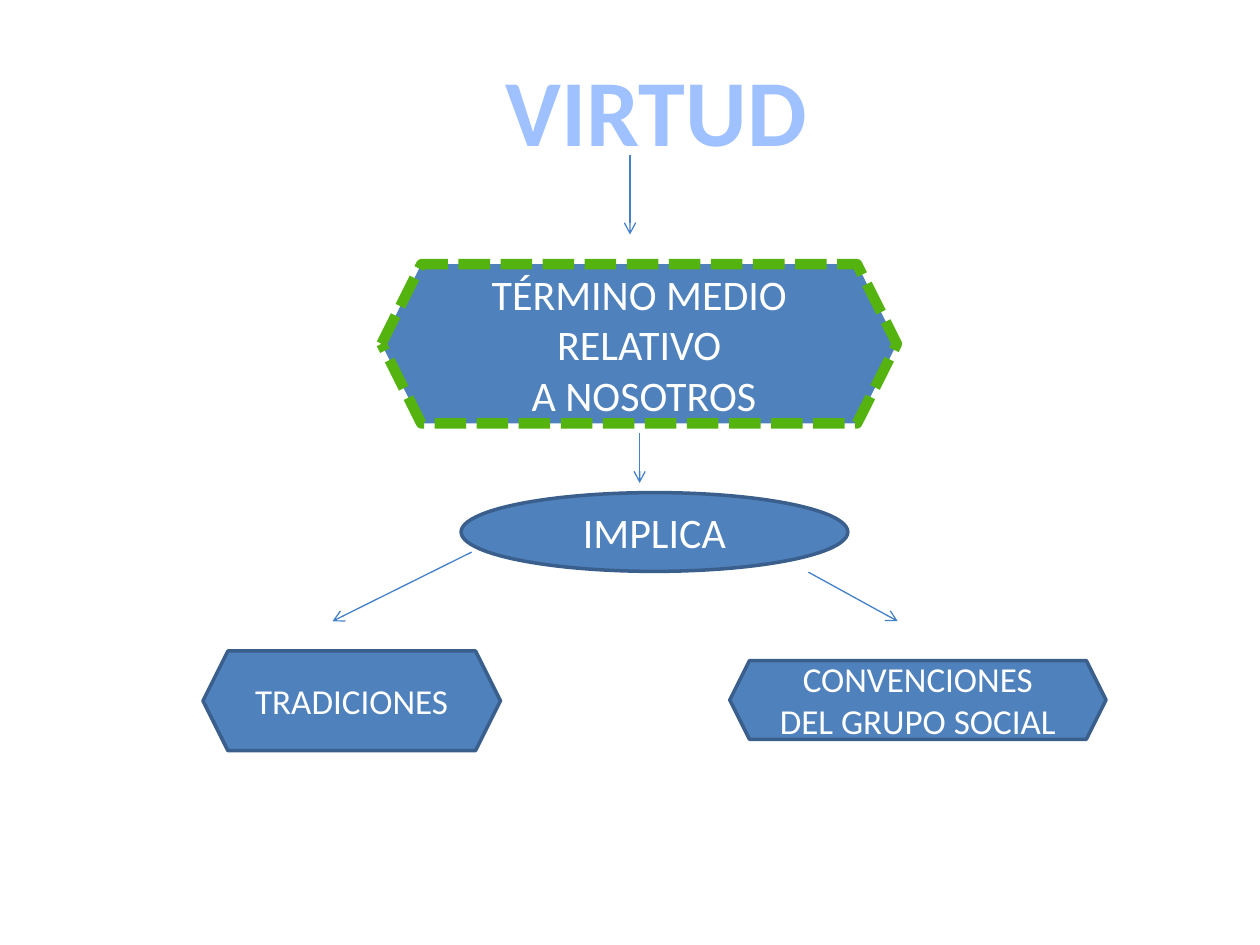
from lxml.etree import SubElement
from pptx import Presentation
from pptx.dml.color import RGBColor
from pptx.enum.dml import MSO_LINE
from pptx.enum.shapes import MSO_CONNECTOR, MSO_SHAPE
from pptx.enum.text import MSO_ANCHOR, MSO_AUTO_SIZE, PP_ALIGN
from pptx.oxml.ns import qn
from pptx.util import Pt

COLORS = {
    "title": "A0C1FF",
    "node": "4F81BD",
    "border": "3A5F8C",
    "highlight": "55B30F",
    "arrow": "4480C8",
    "text": "FFFFFF",
}
FONT = "Calibri"
NODE_TEXT = {
    "word_wrap": True,
    "vertical_anchor": MSO_ANCHOR.MIDDLE,
    "margin_left": Pt(4),
    "margin_right": Pt(4),
}


def color(key):
    return RGBColor.from_string(COLORS[key])


def set_all(target, values):
    for name, value in values.items():
        setattr(target, name, value)


def place(shape, box):
    set_all(shape, dict(zip(("left", "top", "width", "height"), map(Pt, box))))


def write(frame, lines, size, color_key, bold=False):
    """Fill a text frame with one centred paragraph per line."""
    for index, line in enumerate(lines):
        paragraph = frame.paragraphs[0] if index == 0 else frame.add_paragraph()
        paragraph.alignment = PP_ALIGN.CENTER
        run = paragraph.add_run()
        run.text = line
        set_all(run.font, {"name": FONT, "size": Pt(size), "bold": bold})
        run.font.color.rgb = color(color_key)


def add_title(slide, box, wording):
    title = slide.shapes.title
    place(title, box)
    set_all(title.text_frame, {
        "word_wrap": False,
        "auto_size": MSO_AUTO_SIZE.SHAPE_TO_FIT_TEXT,
        "vertical_anchor": MSO_ANCHOR.TOP,
    })
    write(title.text_frame, [wording], 54, "title", bold=True)


def add_node(slide, outline, box, lines, size, border="border", weight=2, dash=None):
    node = slide.shapes.add_shape(outline, *map(Pt, box))
    node.shadow.inherit = False
    node.fill.solid()
    node.fill.fore_color.rgb = color("node")
    node.line.color.rgb = color(border)
    set_all(node.line, {"width": Pt(weight), "dash_style": dash})
    set_all(node.text_frame, NODE_TEXT)
    write(node.text_frame, lines, size, "text")


def add_arrow(slide, start, end):
    arrow = slide.shapes.add_connector(MSO_CONNECTOR.STRAIGHT, *map(Pt, start + end))
    arrow.line.color.rgb = color("arrow")
    arrow.line.width = Pt(0.75)
    SubElement(arrow.line._get_or_add_ln(), qn("a:tailEnd"), type="arrow")
    SubElement(arrow._element.spPr, qn("a:effectLst"))


def add_virtue_map(slide, left, top):
    """Draw the concept map with its upper left corner at the given point."""
    def at(x, y, *size):
        return (left + x, top + y, *size)

    hexagon = MSO_SHAPE.HEXAGON
    add_title(slide, at(164.5, 0, 189, 73), "VIRTUD")
    add_node(slide, hexagon, at(102, 125, 294.5, 91),
             ["TÉRMINO MEDIO RELATIVO", " A NOSOTROS"], 24,
             border="highlight", weight=6, dash=MSO_LINE.SQUARE_DOT)
    add_node(slide, MSO_SHAPE.OVAL, at(147.5, 255.5, 221, 45), ["IMPLICA"], 24)
    add_node(slide, hexagon, at(0, 346, 170, 57), ["TRADICIONES"], 20)
    add_node(slide, hexagon, at(301, 351.5, 215, 45),
             ["CONVENCIONES DEL GRUPO SOCIAL"], 20)
    for start, end in (
        ((244, 62.5), (244, 108)),
        ((249.5, 221.5), (249.5, 250)),
        ((153.5, 289.5), (74, 329)),
        ((346, 301), (397, 329)),
    ):
        add_arrow(slide, at(*start), at(*end))


def main():
    deck = Presentation()
    set_all(deck, {"slide_width": Pt(720), "slide_height": Pt(540)})
    slide = deck.slides.add_slide(deck.slide_layouts.get_by_name("Title Only"))
    add_virtue_map(slide, 116, 26)
    deck.save("out.pptx")


if __name__ == "__main__":
    main()
